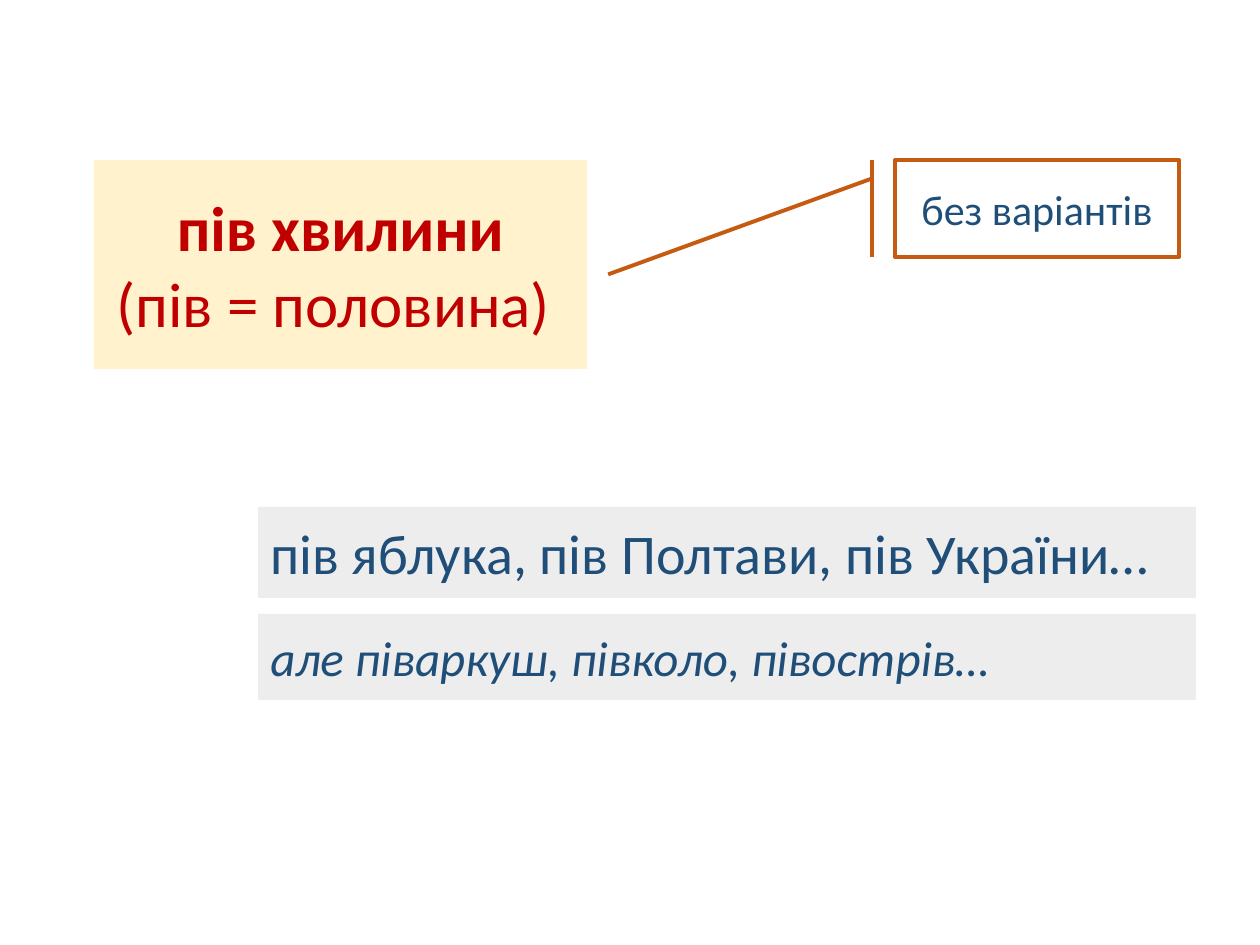
from pptx import Presentation
from pptx.dml.color import RGBColor
from pptx.enum.shapes import MSO_SHAPE
from pptx.enum.text import MSO_ANCHOR, PP_ALIGN
from pptx.util import Emu, Pt

PX = 914400 // 126
COLORS = {
    "cream": "FFF2CC",
    "grey": "EDEDED",
    "red": "C00000",
    "navy": "1F4E79",
    "orange": "C55A11",
}

RULE = ["пів хвилини", "(пів = половина) "]
CALLOUT = "без варіантів"
# text, top, height, format
EXAMPLES = [
    ("пів яблука, пів Полтави, пів України…", 507, 91, {"size": 32}),
    ("але піваркуш, півколо, півострів…", 614, 86, {"size": 28, "italic": True}),
]


def color(name):
    return RGBColor.from_string(COLORS[name])


def add_box(slide, box, fill=None, line=None, kind=MSO_SHAPE.RECTANGLE):
    shape = slide.shapes.add_shape(kind, *(Emu(length * PX) for length in box))
    shape.shadow.inherit = False
    if fill:
        shape.fill.solid()
        shape.fill.fore_color.rgb = color(fill)
    else:
        shape.fill.background()
    if line:
        shape.line.color.rgb = color(line)
        shape.line.width = Pt(2.25)
    else:
        shape.line.fill.background()
    shape.text_frame.word_wrap = True
    shape.text_frame.vertical_anchor = MSO_ANCHOR.MIDDLE
    return shape


def write(paragraph, text, size, ink="navy", bold=False, italic=False,
          align=PP_ALIGN.LEFT):
    paragraph.alignment = align
    run = paragraph.add_run()
    run.text = text
    font = run.font
    font.name = "Calibri"
    font.size = Pt(size)
    font.bold = bold
    font.italic = italic
    font.color.rgb = color(ink)


def main():
    presentation = Presentation()
    presentation.slide_width = Emu(1260 * PX)
    presentation.slide_height = Emu(945 * PX)
    slide = presentation.slides.add_slide(presentation.slide_layouts[6])

    frame = add_box(slide, (94, 160, 493, 209), fill="cream").text_frame
    frame.add_paragraph()
    for paragraph, text in zip(frame.paragraphs, RULE):
        write(paragraph, text, 36, ink="red", bold=text == RULE[0],
              align=PP_ALIGN.CENTER)

    callout = add_box(slide, (895, 160, 284, 97), line="orange",
                      kind=MSO_SHAPE.LINE_CALLOUT_1_BORDER_AND_ACCENT_BAR)
    # Pointer start and end as (y, x) shares of the box
    for index, share in enumerate((0.19, -0.08, 1.18, -1.01)):
        callout.adjustments[index] = share
    write(callout.text_frame.paragraphs[0], CALLOUT, 24, align=PP_ALIGN.CENTER)

    for text, top, height, style in EXAMPLES:
        shape = add_box(slide, (258, top, 938, height), fill="grey")
        write(shape.text_frame.paragraphs[0], text, **style)

    presentation.save("out.pptx")


if __name__ == "__main__":
    main()
